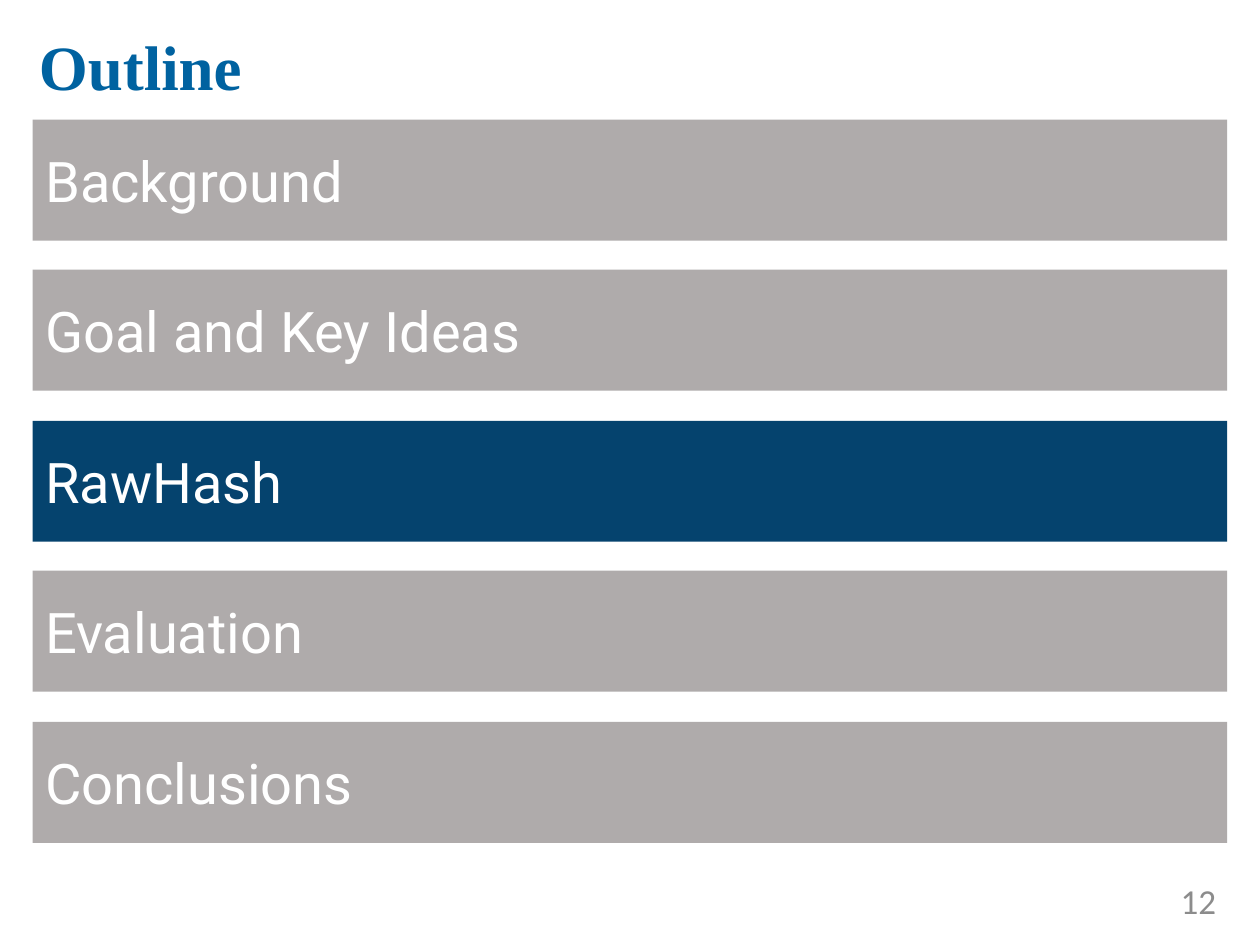
from dataclasses import dataclass

from pptx import Presentation
from pptx.dml.color import RGBColor
from pptx.enum.shapes import MSO_SHAPE
from pptx.enum.text import MSO_ANCHOR, PP_ALIGN
from pptx.util import Emu, Pt

EMU_PER_PX = 9144

WHITE = RGBColor(0xFF, 0xFF, 0xFF)
GREY = RGBColor(0xAF, 0xAB, 0xAB)
NAVY = RGBColor(0x05, 0x43, 0x6E)
TITLE_BLUE = RGBColor(0x00, 0x62, 0xA0)
NUMBER_GREY = RGBColor(0x8C, 0x8C, 0x8C)

BAR_LEFT, BAR_WIDTH, BAR_HEIGHT = 26, 948, 96
FIRST_BAR_TOP, LAST_BAR_TOP = 95, 573


@dataclass(frozen=True)
class Section:
    name: str
    fill: RGBColor = GREY


SECTIONS = (
    Section("Background"),
    Section("Goal and Key Ideas"),
    Section("RawHash", NAVY),
    Section("Evaluation"),
    Section("Conclusions"),
)


def px(length: int) -> Emu:
    return Emu(length * EMU_PER_PX)


def write_text(box, text: str, *, font: str, size: int, color: RGBColor,
               bold: bool = False, align: PP_ALIGN = PP_ALIGN.LEFT,
               space_after: int = 0) -> None:
    frame = box.text_frame
    frame.word_wrap = True
    frame.vertical_anchor = MSO_ANCHOR.MIDDLE
    para = frame.paragraphs[0]
    para.alignment = align
    para.space_after = Pt(space_after)
    span = para.add_run()
    span.text = text
    span.font.name = font
    span.font.size = Pt(size)
    span.font.bold = bold
    span.font.color.rgb = color


def draw_section(page, section: Section, top: int) -> None:
    bar = page.shapes.add_shape(MSO_SHAPE.RECTANGLE, px(BAR_LEFT), px(top),
                                px(BAR_WIDTH), px(BAR_HEIGHT))
    bar.shadow.inherit = False
    bar.fill.solid()
    bar.fill.fore_color.rgb = section.fill
    bar.line.fill.background()
    write_text(bar, section.name, font="Roboto", size=32, color=WHITE)


def main() -> None:
    deck = Presentation()
    deck.slide_width, deck.slide_height = px(1000), px(750)
    page = deck.slides.add_slide(deck.slide_layouts[6])

    title = page.shapes.add_textbox(px(21), px(10), px(962), px(84))
    write_text(title, "Outline", font="Times New Roman", size=36,
               color=TITLE_BLUE, bold=True, space_after=6)

    travel = LAST_BAR_TOP - FIRST_BAR_TOP
    for index, section in enumerate(SECTIONS):
        top = FIRST_BAR_TOP + index * travel // (len(SECTIONS) - 1)
        draw_section(page, section, top)

    page_number = page.shapes.add_textbox(px(867), px(695), px(108), px(40))
    write_text(page_number, "12", font="Calibri", size=20,
               color=NUMBER_GREY, align=PP_ALIGN.RIGHT)

    deck.save("out.pptx")


if __name__ == "__main__":
    main()
